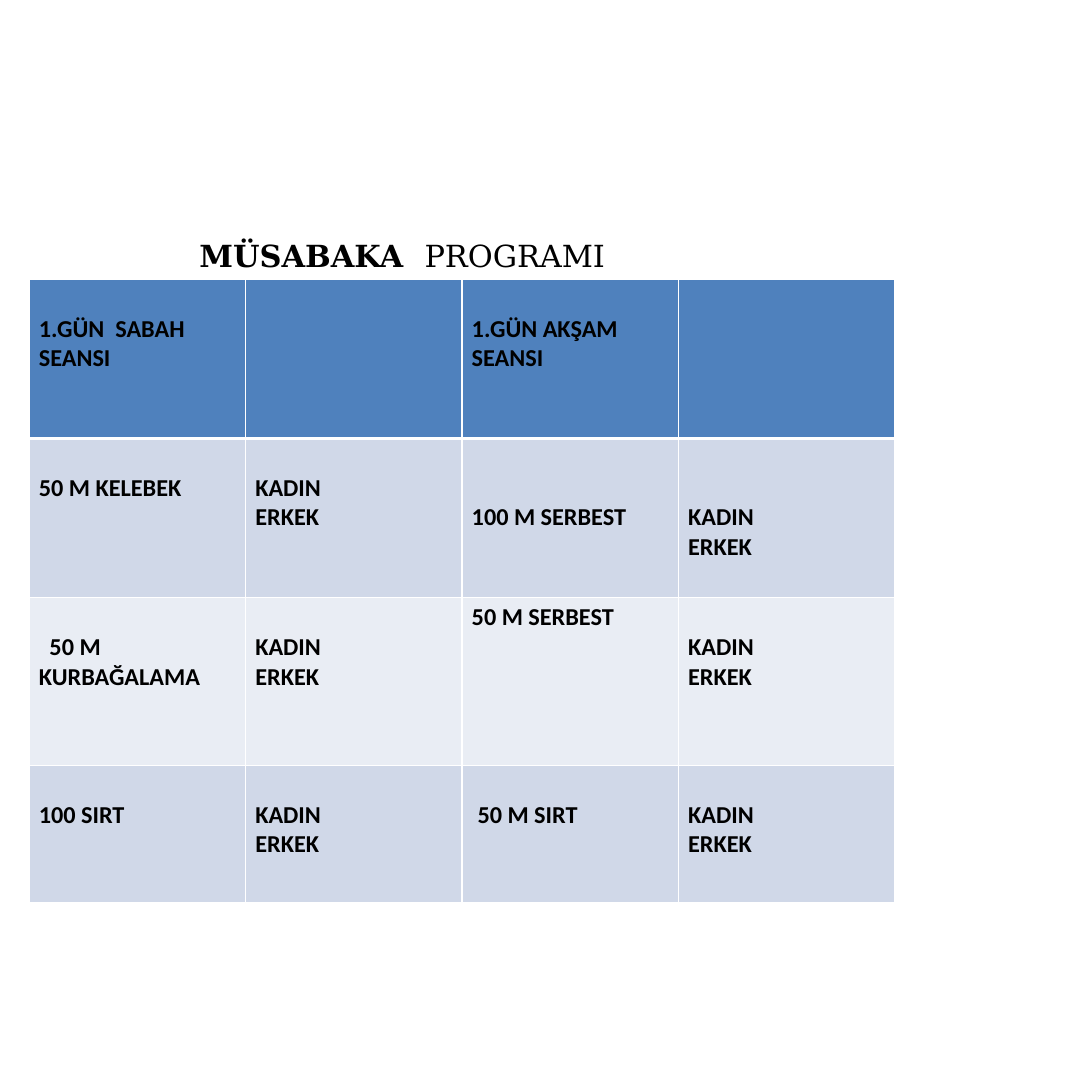
from lxml.etree import SubElement
from pptx import Presentation
from pptx.dml.color import RGBColor
from pptx.enum.text import PP_ALIGN
from pptx.oxml.ns import qn
from pptx.util import Inches, Pt

BLACK = RGBColor(0x00, 0x00, 0x00)
WHITE = RGBColor(0xFF, 0xFF, 0xFF)
HEADER_BLUE = RGBColor(0x4F, 0x81, 0xBD)
BAND_DARK = RGBColor(0xD0, 0xD8, 0xE8)
BAND_LIGHT = RGBColor(0xE9, 0xED, 0xF4)

COLUMN_WIDTH = 2.23
ROW_HEIGHTS = [1.64, 1.64, 1.73, 1.41]
ROW_FILLS = [HEADER_BLUE, BAND_DARK, BAND_LIGHT, BAND_DARK]
CELL_MARGIN = 0.05
LINE_HEIGHT = 0.305

GENDERS = ["KADIN", "ERKEK"]
# Each cell: paragraphs, lines of space above, first-line indent in inches
PROGRAM = [
    [(["1.GÜN  SABAH SEANSI"], 1, 0), ([], 0, 0),
     (["1.GÜN AKŞAM SEANSI"], 1, 0), ([], 0, 0)],
    [(["50 M KELEBEK"], 1, 0), (GENDERS, 1, 0),
     (["100 M SERBEST"], 2, 0), (GENDERS, 2, 0)],
    [(["50 M  KURBAĞALAMA"], 1, 0.11), (GENDERS, 1, 0),
     (["50 M SERBEST"], 0, 0), (GENDERS, 1, 0)],
    [(["100 SIRT"], 1, 0), (GENDERS, 1, 0),
     (["50 M SIRT"], 1, 0.06), (GENDERS, 1, 0)],
]


def add_title(slide):
    box = slide.shapes.add_textbox(Inches(1.21), Inches(2.38), Inches(5.87), Inches(0.41))
    tf = box.text_frame
    tf.word_wrap = True
    tf.margin_left = tf.margin_top = tf.margin_right = tf.margin_bottom = 0
    p = tf.paragraphs[0]
    p.alignment = PP_ALIGN.CENTER
    p.line_spacing = Pt(31.6)
    p.font.name = "DejaVu Serif"
    p.font.size = Pt(22.6)
    p.font.color.rgb = BLACK
    for text, bold in [("MÜSABAKA  ", True), ("PROGRAMI", False)]:
        r = p.add_run()
        r.text = text
        r.font.bold = bold


def set_borders(cell, top, bottom):
    """Draw white borders; top and bottom widths are in points."""
    tcPr = cell._tc.get_or_add_tcPr()
    for side, width in [("L", 1), ("R", 1), ("T", top), ("B", bottom)]:
        ln = SubElement(tcPr, qn(f"a:ln{side}"), w=str(Pt(width)))
        fill = SubElement(ln, qn("a:solidFill"))
        SubElement(fill, qn("a:srgbClr"), val=str(WHITE))


def fill_cell(cell, lines, lines_above, indent):
    cell.margin_top = Inches(CELL_MARGIN + lines_above * LINE_HEIGHT)
    tf = cell.text_frame
    for i, line in enumerate(lines):
        p = tf.paragraphs[0] if i == 0 else tf.add_paragraph()
        p.text = line
        p.font.name = "Calibri"
        p.font.size = Pt(18)
        p.font.bold = True
        p.font.color.rgb = BLACK
        if indent:
            p._p.get_or_add_pPr().set("indent", str(Inches(indent)))


def add_program_table(slide):
    rows, cols = len(PROGRAM), len(PROGRAM[0])
    frame = slide.shapes.add_table(rows, cols, Inches(0.3), Inches(2.88),
                                   Inches(cols * COLUMN_WIDTH), Inches(sum(ROW_HEIGHTS)))
    table = frame.table
    for column in table.columns:
        column.width = Inches(COLUMN_WIDTH)
    for i, (height, color, entries) in enumerate(zip(ROW_HEIGHTS, ROW_FILLS, PROGRAM)):
        table.rows[i].height = Inches(height)
        for cell, entry in zip(table.rows[i].cells, entries):
            fill_cell(cell, *entry)
            set_borders(cell, top=3 if i == 1 else 1, bottom=3 if i == 0 else 1)
            cell.fill.solid()
            cell.fill.fore_color.rgb = color


def main():
    prs = Presentation()
    prs.slide_width = prs.slide_height = Inches(11.25)
    slide = prs.slides.add_slide(prs.slide_layouts[6])
    add_title(slide)
    add_program_table(slide)
    prs.save("out.pptx")


if __name__ == "__main__":
    main()
